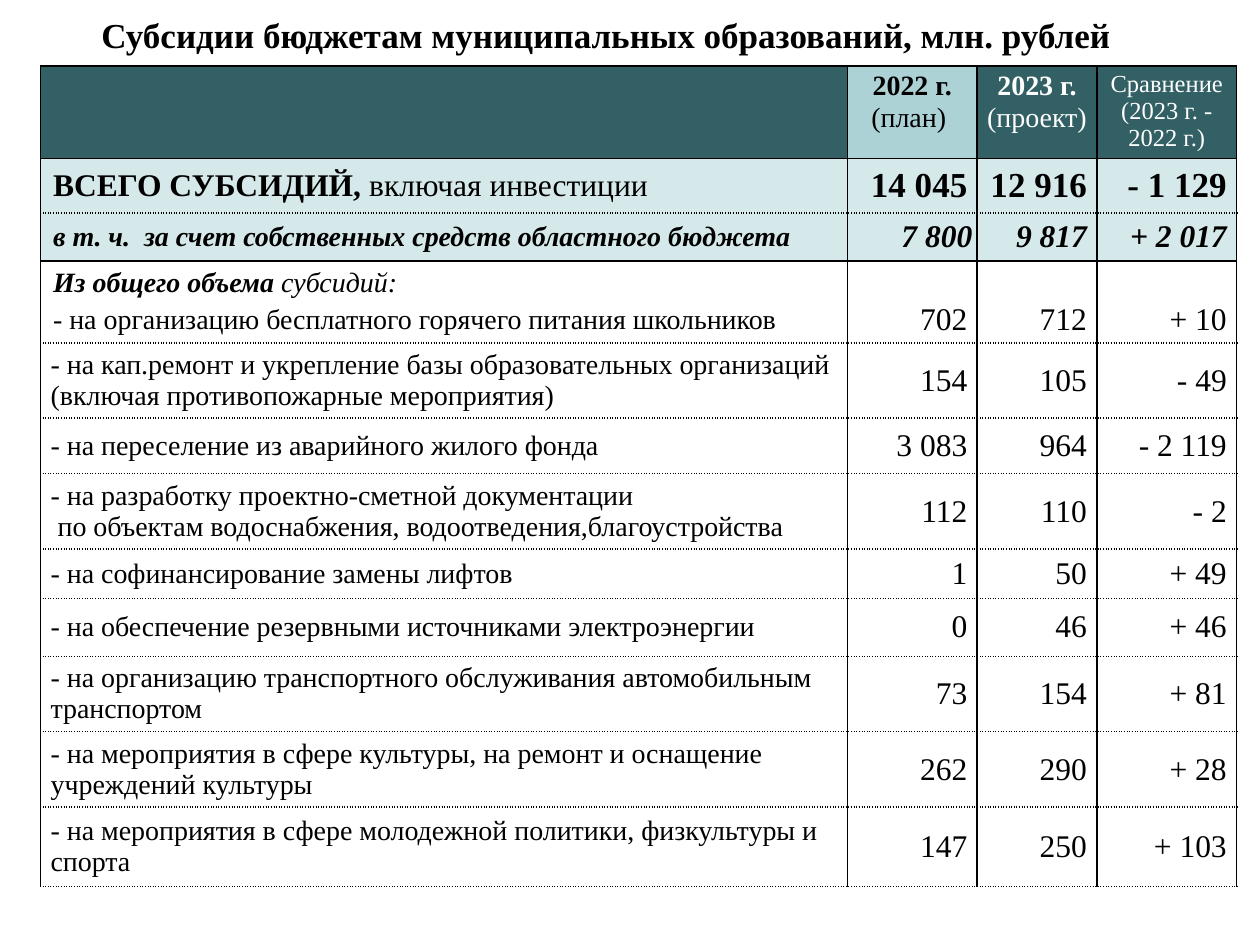
"""Build the slide with the table of subsidies to municipal budgets."""
from dataclasses import dataclass

import lxml.etree
import pptx
import pptx.dml.color
import pptx.enum.text
import pptx.oxml.ns
import pptx.table
import pptx.text.text
import pptx.util

Cm = pptx.util.Cm
Pt = pptx.util.Pt
RGBColor = pptx.dml.color.RGBColor
Align = pptx.enum.text.PP_ALIGN
Anchor = pptx.enum.text.MSO_ANCHOR

BLACK = RGBColor(0x00, 0x00, 0x00)
WHITE = RGBColor(0xFF, 0xFF, 0xFF)
DARK_TEAL = RGBColor(0x32, 0x60, 0x65)
MID_TEAL = RGBColor(0xAD, 0xD2, 0xD6)
PALE_TEAL = RGBColor(0xD6, 0xE9, 0xEA)
FONT = "Times New Roman"
COLUMN_WIDTHS = (16.26, 2.62, 2.41, 2.82)


@dataclass(frozen=True)
class Span:
    text: str
    bold: bool = False
    italic: bool = False


@dataclass(frozen=True)
class Heading:
    lines: tuple[tuple[Span, ...], ...]
    fill: RGBColor
    color: RGBColor = WHITE
    size: int = 16


@dataclass(frozen=True)
class Entry:
    height: float
    label: tuple[tuple[Span, ...], ...]
    values: tuple[str, str, str]
    label_size: int = 16
    value_size: int = 18
    bold: bool = False
    italic: bool = False
    fill: RGBColor | None = None
    anchor: Anchor = Anchor.MIDDLE
    left: float = 0.2
    top_dash: str = "sysDot"
    bottom_dash: str = "sysDot"


def item(height: float, text: str, *values: str) -> Entry:
    return Entry(height, ((Span(text),),), values)


HEADINGS = (
    Heading((), DARK_TEAL),
    Heading(((Span("2022 г. ", bold=True), Span("(план) ")),), MID_TEAL, BLACK),
    Heading(((Span("2023 г.", bold=True),), (Span("(проект)"),)), DARK_TEAL),
    Heading(((Span("Сравнение (2023 г. -\v2022 г.)"),),), DARK_TEAL, size=14),
)

ENTRIES = (
    Entry(1.09, ((Span("ВСЕГО СУБСИДИЙ, ", bold=True), Span("включая инвестиции")),),
          ("14 045", "12 916", "- 1 129"), label_size=18, value_size=20,
          bold=True, fill=PALE_TEAL, left=0.25, top_dash="solid"),
    Entry(0.97, ((Span("в т. ч.  за счет собственных средств областного бюджета",
                       bold=True, italic=True),),),
          ("7 800", "9 817", "+ 2 017"), bold=True, italic=True,
          fill=PALE_TEAL, left=0.25, bottom_dash="solid"),
    Entry(1.65, ((Span("Из общего объема ", bold=True, italic=True),
                  Span("субсидий:", italic=True)),
                 (Span("- на организацию бесплатного горячего питания школьников"),)),
          ("702", "712", "+ 10"), anchor=Anchor.BOTTOM, left=0.25, top_dash="solid"),
    item(1.52, "- на кап.ремонт и укрепление базы образовательных организаций "
         "(включая противопожарные мероприятия)", "154", "105", "- 49"),
    item(1.12, "- на переселение из аварийного жилого фонда", "3 083", "964", "- 2 119"),
    item(1.52, "- на разработку проектно-сметной документации\v"
         " по объектам водоснабжения, водоотведения,благоустройства", "112", "110", "- 2"),
    item(0.99, "- на софинансирование замены лифтов", "1", "50", "+ 49"),
    item(1.17, "- на обеспечение резервными источниками электроэнергии", "0", "46", "+ 46"),
    item(1.52, "- на организацию транспортного обслуживания автомобильным транспортом",
         "73", "154", "+ 81"),
    item(1.52, "- на мероприятия в сфере культуры, на ремонт и оснащение "
         "учреждений культуры", "262", "290", "+ 28"),
    item(1.6, "- на мероприятия в сфере молодежной политики, физкультуры и спорта",
         "147", "250", "+ 103"),
)


def write_line(para: pptx.text.text._Paragraph, spans: tuple[Span, ...], size: int,
               color: RGBColor, align: Align) -> None:
    para.alignment = align
    para.font.name = FONT
    para.font.size = Pt(size)
    para.font.color.rgb = color
    same_style = len({(span.bold, span.italic) for span in spans}) == 1
    for span in spans:
        first, *rest = span.text.split("\v")
        run = para.add_run()
        run.text = first
        runs = [run]
        for part in rest:
            para.add_line_break()
            run = para.add_run()
            run.text = part
            runs.append(run)
        for font in [para.font] if same_style else [run.font for run in runs]:
            font.bold = span.bold
            font.italic = span.italic


def write_lines(cell: pptx.table._Cell, lines: tuple[tuple[Span, ...], ...], size: int,
                color: RGBColor, align: Align) -> None:
    frame = cell.text_frame
    for index, spans in enumerate(lines):
        para = frame.add_paragraph() if index else frame.paragraphs[0]
        write_line(para, spans, size, color, align)
        if index and align == Align.LEFT:
            para.space_before = Pt(0.2 * size)


def format_cell(cell: pptx.table._Cell, fill: RGBColor | None, anchor: Anchor,
                margins: tuple[float, float, float],
                top_dash: str = "solid", bottom_dash: str = "solid") -> None:
    left, right, vertical = margins
    cell.margin_left, cell.margin_right = Cm(left), Cm(right)
    cell.margin_top = cell.margin_bottom = Cm(vertical)
    cell.vertical_anchor = anchor
    qn = pptx.oxml.ns.qn
    properties = cell._tc.get_or_add_tcPr()
    dashes = {"a:lnL": "solid", "a:lnR": "solid", "a:lnT": top_dash, "a:lnB": bottom_dash}
    for tag, dash in dashes.items():
        line = lxml.etree.SubElement(properties, qn(tag), w=str(Pt(1)))
        paint = lxml.etree.SubElement(line, qn("a:solidFill"))
        lxml.etree.SubElement(paint, qn("a:srgbClr"), val=str(BLACK))
        lxml.etree.SubElement(line, qn("a:prstDash"), val=dash)
    if fill is None:
        cell.fill.background()
    else:
        cell.fill.solid()
        cell.fill.fore_color.rgb = fill


def draw_heading(cell: pptx.table._Cell, heading: Heading) -> None:
    write_lines(cell, heading.lines, heading.size, heading.color, Align.CENTER)
    format_cell(cell, heading.fill, Anchor.TOP, (0.1, 0.1, 0.1))


def draw_entry(table: pptx.table.Table, row: int, entry: Entry) -> None:
    table.rows[row].height = Cm(entry.height)
    dashes = entry.top_dash, entry.bottom_dash
    label = table.cell(row, 0)
    write_lines(label, entry.label, entry.label_size, BLACK, Align.LEFT)
    format_cell(label, entry.fill, Anchor.MIDDLE, (entry.left, 0.25, 0.12), *dashes)
    for column, value in enumerate(entry.values, start=1):
        cell = table.cell(row, column)
        spans = (Span(value, entry.bold, entry.italic),)
        write_lines(cell, (spans,), entry.value_size, BLACK, Align.RIGHT)
        tight = entry.italic and column == 1
        margins = (0.1, 0.1, 0) if tight else (0.25, 0.2, 0.12)
        format_cell(cell, entry.fill, entry.anchor, margins, *dashes)


def main() -> None:
    deck = pptx.Presentation()
    deck.slide_width, deck.slide_height = Cm(25.4), Cm(19.05)
    page = deck.slides.add_slide(deck.slide_layouts[5])
    title = page.shapes.title
    title.left, title.top, title.width, title.height = Cm(-0.48), Cm(0.03), Cm(25.4), Cm(1.35)
    title.text_frame.vertical_anchor = Anchor.MIDDLE
    heading = Span("Субсидии бюджетам муниципальных образований, млн. рублей", bold=True)
    write_line(title.text_frame.paragraphs[0], (heading,), 20, BLACK, Align.CENTER)

    header_height = 1.87
    height = header_height + sum(entry.height for entry in ENTRIES)
    table = page.shapes.add_table(len(ENTRIES) + 1, len(COLUMN_WIDTHS), Cm(0.82), Cm(1.33),
                                  Cm(sum(COLUMN_WIDTHS)), Cm(height)).table
    table.first_row = table.horz_banding = False
    table.rows[0].height = Cm(header_height)
    for column, (width, column_heading) in enumerate(zip(COLUMN_WIDTHS, HEADINGS)):
        table.columns[column].width = Cm(width)
        draw_heading(table.cell(0, column), column_heading)
    for row, entry in enumerate(ENTRIES, start=1):
        draw_entry(table, row, entry)
    deck.save("out.pptx")


if __name__ == "__main__":
    main()
